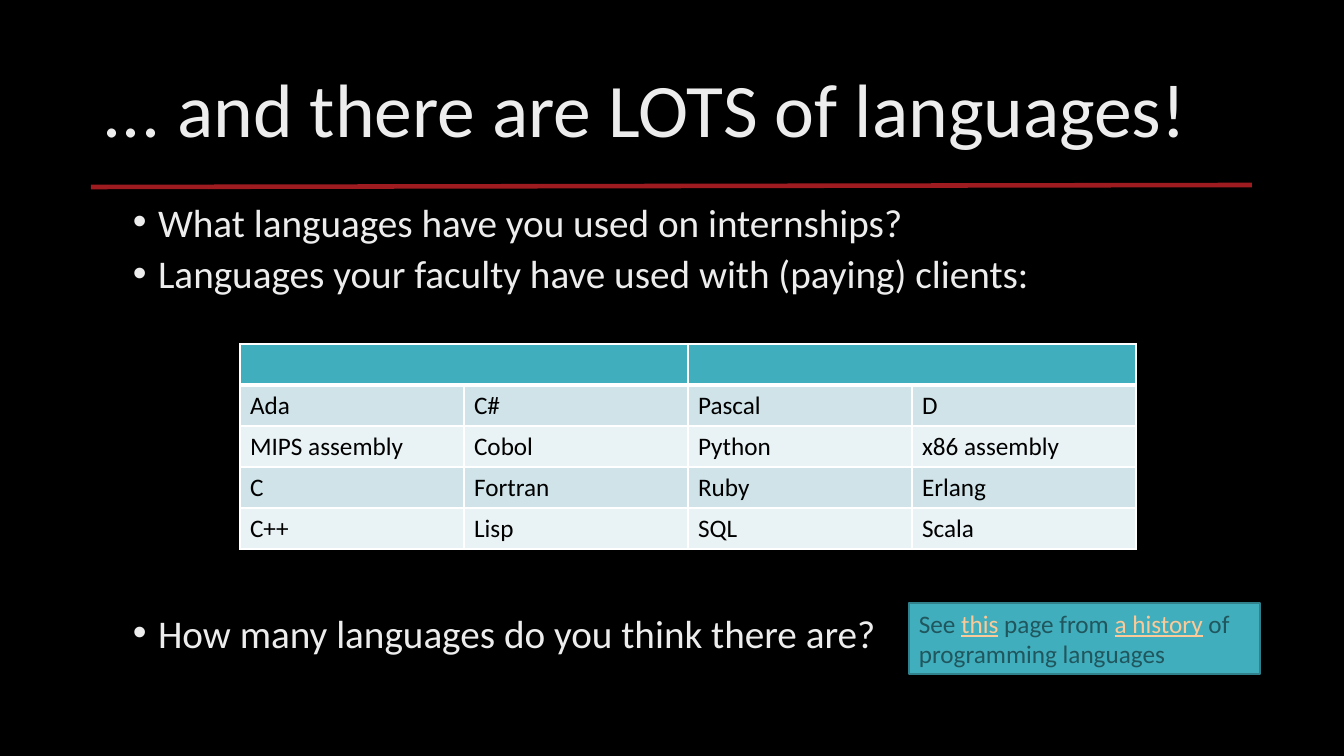
from lxml import etree
from pptx import Presentation
from pptx import util as u
from pptx.dml.color import RGBColor
from pptx.enum import shapes, text
from pptx.oxml.ns import qn

PX = 914400 / 100.8
FONT = "Calibri"
LIGHT, TEAL, WHITE = "EDEDED", "41AEBD", "FFFFFF"
DARK_TEAL, LINK = "20575E", "FBCA98"
BANDS = ["CFE3E8", "E9F2F4"]

LANGUAGES = [
    ["Ada", "C#", "Pascal", "D"],
    ["MIPS assembly", "Cobol", "Python", "x86 assembly"],
    ["C", "Fortran", "Ruby", "Erlang"],
    ["C++", "Lisp", "SQL", "Scala"],
]


def px(*lengths):
    return [u.Emu(round(length * PX)) for length in lengths]


def color(value):
    return RGBColor.from_string(value)


def add_text(paragraph, content, size=18, fill="000000", underline=False):
    run = paragraph.add_run()
    run.text = content
    run.font.name = FONT
    run.font.size = u.Pt(size)
    run.font.color.rgb = color(fill)
    run.font.underline = underline


def add_box(slide, *bounds, anchor=text.MSO_ANCHOR.TOP):
    frame = slide.shapes.add_textbox(*px(*bounds)).text_frame
    frame.word_wrap = True
    frame.vertical_anchor = anchor
    return frame


def add_rule(slide, *ends):
    line = slide.shapes.add_connector(shapes.MSO_CONNECTOR.STRAIGHT, *px(*ends))
    line.line.color.rgb = color("9E1B20")
    line.line.width = u.Pt(3.25)
    etree.SubElement(line._element.spPr, qn("a:effectLst"))


def add_bullets(slide, bounds, items):
    """Each item is a text and the space before it in points."""
    frame = add_box(slide, *bounds)
    for index, (content, space) in enumerate(items):
        paragraph = frame.paragraphs[0] if index == 0 else frame.add_paragraph()
        properties = paragraph._p.get_or_add_pPr()
        properties.set("marL", "228600")
        properties.set("indent", "-228600")
        font = etree.SubElement(properties, qn("a:buFont"))
        font.set("typeface", "Arial")
        etree.SubElement(properties, qn("a:buChar")).set("char", "•")
        paragraph.line_spacing = 0.8
        paragraph.space_before = u.Pt(space)
        add_text(paragraph, content, size=28, fill=LIGHT)


def style_cell(cell, fill, bottom=1):
    cell.fill.solid()
    cell.fill.fore_color.rgb = color(fill)
    properties = cell._tc.get_or_add_tcPr()
    for index, (side, width) in enumerate(zip("LRTB", (1, 1, 1, bottom))):
        border = etree.Element(qn(f"a:ln{side}"), w=str(u.Pt(width)))
        solid = etree.SubElement(border, qn("a:solidFill"))
        etree.SubElement(solid, qn("a:srgbClr")).set("val", WHITE)
        properties.insert(index, border)


def add_language_table(slide, left, top, column_width, row_height):
    rows, columns = len(LANGUAGES) + 1, len(LANGUAGES[0])
    bounds = px(left, top, column_width * columns, row_height * rows)
    table = slide.shapes.add_table(rows, columns, *bounds).table

    # Header: two empty cells, each over a pair of columns
    for column in range(columns):
        style_cell(table.cell(0, column), TEAL, bottom=3)
    for column in range(0, columns, 2):
        table.cell(0, column).merge(table.cell(0, column + 1))

    # Banded body
    for row, names in enumerate(LANGUAGES, start=1):
        for column, name in enumerate(names):
            cell = table.cell(row, column)
            style_cell(cell, BANDS[(row - 1) % 2])
            add_text(cell.text_frame.paragraphs[0], name)


def add_callout(slide, bounds, parts):
    shape = slide.shapes.add_shape(shapes.MSO_SHAPE.RECTANGLE, *px(*bounds))
    shape.shadow.inherit = False
    shape.fill.solid()
    shape.fill.fore_color.rgb = color(TEAL)
    shape.line.color.rgb = color("30818C")
    shape.line.width = u.Pt(1)
    shape.text_frame.word_wrap = True
    paragraph = shape.text_frame.paragraphs[0]
    paragraph.alignment = text.PP_ALIGN.LEFT
    for content, is_link in parts:
        add_text(paragraph, content, fill=LINK if is_link else DARK_TEAL,
                 underline=is_link)


def main():
    presentation = Presentation()
    presentation.slide_width, presentation.slide_height = px(1344, 756)
    slide = presentation.slides.add_slide(presentation.slide_layouts[6])
    slide.background.fill.solid()
    slide.background.fill.fore_color.rgb = color("000000")

    # Title and rule
    add_rule(slide, 91, 187, 1252, 185)
    title = add_box(slide, 93, 40, 1159, 146, anchor=text.MSO_ANCHOR.MIDDLE)
    title.paragraphs[0].line_spacing = 0.9
    add_text(title.paragraphs[0], "... and there are LOTS of languages!",
             size=54, fill=LIGHT)

    # Questions, with room for the table before the last one
    add_bullets(slide, (123, 202, 1128, 480), [
        ("What languages have you used on internships?", 0),
        ("Languages your faculty have used with (paying) clients:", 10),
        ("How many languages do you think there are?", 230),
    ])
    add_language_table(slide, 240, 344, column_width=224, row_height=41)

    # Reference
    add_callout(slide, (909, 603, 351, 71), [
        ("See ", False),
        ("this", True),
        (" page from ", False),
        ("a history", True),
        (" of programming languages", False),
    ])
    presentation.save("out.pptx")


if __name__ == "__main__":
    main()
